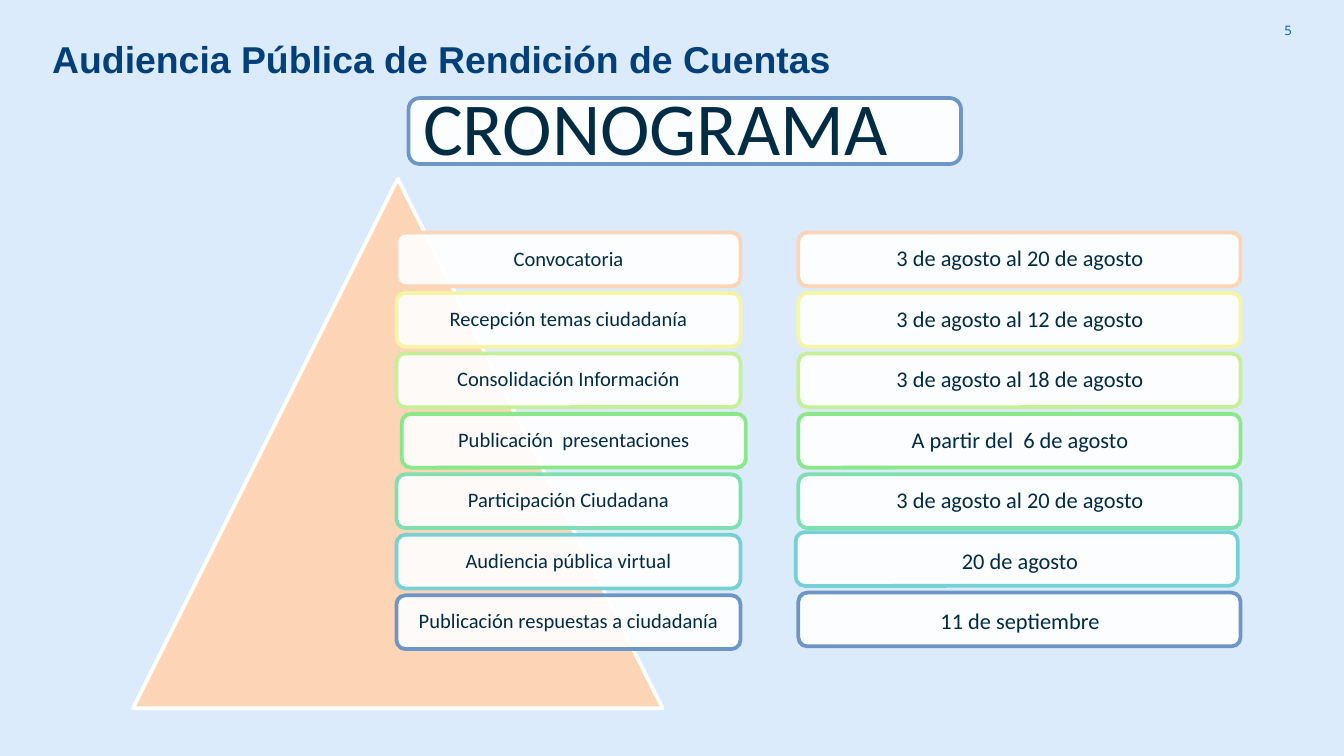
from dataclasses import dataclass

from lxml import etree
from pptx import Presentation
from pptx.dml.color import RGBColor
from pptx.enum.shapes import MSO_SHAPE
from pptx.enum.text import MSO_ANCHOR, PP_ALIGN
from pptx.oxml.ns import qn
from pptx.util import Inches, Pt

ROUNDED = MSO_SHAPE.ROUNDED_RECTANGLE
TRIANGLE = MSO_SHAPE.ISOSCELES_TRIANGLE
TOP, MIDDLE = MSO_ANCHOR.TOP, MSO_ANCHOR.MIDDLE
LEFT, CENTER, RIGHT = PP_ALIGN.LEFT, PP_ALIGN.CENTER, PP_ALIGN.RIGHT


@dataclass(frozen=True)
class Theme:
    background: str = "DCEBFB"
    white: str = "FFFFFF"
    ink: str = "022B44"
    title: str = "033F78"
    number: str = "0054BC"
    peach: str = "FBD5B5"
    blue: str = "6D96C7"
    rows: tuple = ("FBD5B5", "F6F4A5", "C5F097", "8AE88A", "7FDFB0", "75D1D4", "6D96C7")
    body_font: str = "Calibri"
    title_font: str = "Arial"
    number_font: str = "Open Sans"
    banner_size: int = 40
    title_size: int = 20
    date_size: int = 12
    stage_size: int = 11
    number_size: int = 7
    line_width: int = 2
    card_opacity: int = 90


THEME = Theme()

# Stage, left edge of its card, dates, left edge and upward shift of their card
SCHEDULE = [
    ("Convocatoria", 2.95, "3 de agosto al 20 de agosto", 5.94, 0),
    ("Recepción temas ciudadanía", 2.95, "3 de agosto al 12 de agosto", 5.94, 0),
    ("Consolidación Información", 2.95, "3 de agosto al 18 de agosto", 5.94, 0),
    ("Publicación  presentaciones", 2.99, "A partir del  6 de agosto", 5.94, 0),
    ("Participación Ciudadana", 2.95, "3 de agosto al 20 de agosto", 5.94, 0),
    ("Audiencia pública virtual", 2.95, "20 de agosto", 5.92, 0.02),
    ("Publicación respuestas a ciudadanía", 2.95, "11 de septiembre", 5.94, 0.02),
]
ROW_TOP, ROW_PITCH, ROW_HEIGHT = 1.73, 0.45, 0.4
STAGE_WIDTH, DATE_WIDTH = 2.56, 3.29
INSET = 0.02
LABEL_HEIGHT = ROW_HEIGHT - 2 * INSET
DATE_LABEL_LEFT, DATE_LABEL_WIDTH = 5.97, 3.24


def rgb(color):
    return RGBColor.from_string(color)


def add_label(s, box, text, size, color=THEME.ink, font=THEME.body_font, bold=False,
              align=CENTER, anchor=MIDDLE, margin=0.05, side_margin=None, spacing=0.9):
    """Text box with one paragraph; side_margin defaults to margin."""
    tf = s.shapes.add_textbox(*map(Inches, box)).text_frame
    tf.word_wrap = True
    tf.vertical_anchor = anchor
    tf.margin_top = tf.margin_bottom = Inches(margin)
    tf.margin_left = tf.margin_right = Inches(margin if side_margin is None else side_margin)
    p = tf.paragraphs[0]
    p.text = text
    p.alignment = align
    p.line_spacing = spacing
    p.font.size = Pt(size)
    p.font.name = font
    p.font.bold = bold
    p.font.color.rgb = rgb(color)


def add_outlined(s, kind, box, fill, line):
    sp = s.shapes.add_shape(kind, *map(Inches, box))
    sp.shadow.inherit = False
    sp.fill.solid()
    sp.fill.fore_color.rgb = rgb(fill)
    sp.line.color.rgb = rgb(line)
    sp.line.width = Pt(THEME.line_width)
    return sp


def add_card(s, box, line):
    """Rounded, slightly transparent white card."""
    sp = add_outlined(s, ROUNDED, box, THEME.white, line)
    color = sp.fill._xPr.find(qn("a:solidFill"))[0]
    etree.SubElement(color, qn("a:alpha"), val=str(THEME.card_opacity * 1000))


def add_schedule(s):
    for i, (stage, stage_left, dates, dates_left, lift) in enumerate(SCHEDULE):
        top = ROW_TOP + i * ROW_PITCH
        label_top = top + INSET
        add_card(s, (stage_left, top, STAGE_WIDTH, ROW_HEIGHT), THEME.rows[i])
        add_label(s, (stage_left + INSET, label_top, STAGE_WIDTH - 2 * INSET, LABEL_HEIGHT),
                  stage, THEME.stage_size)
        add_card(s, (dates_left, top - lift, DATE_WIDTH, ROW_HEIGHT), THEME.rows[i])
        add_label(s, (DATE_LABEL_LEFT, label_top, DATE_LABEL_WIDTH, LABEL_HEIGHT),
                  dates, THEME.date_size, margin=0.07)


def main():
    prs = Presentation()
    prs.slide_width = Inches(10)
    prs.slide_height = prs.slide_width * 9 // 16
    s = prs.slides.add_slide(prs.slide_layouts[6])
    s.background.fill.solid()
    s.background.fill.fore_color.rgb = rgb(THEME.background)

    add_label(s, (9.11, 0.01, 0.6, 0.43), "5", THEME.number_size, color=THEME.number,
              font=THEME.number_font, align=RIGHT, margin=0.1, spacing=1.0)
    add_label(s, (0.29, 0.22, 7.3, 0.77), "Audiencia Pública de Rendición de Cuentas",
              THEME.title_size, color=THEME.title, font=THEME.title_font, bold=True,
              align=LEFT, anchor=TOP, side_margin=0.1, spacing=1.0)
    add_card(s, (3.04, 0.73, 4.11, 0.49), THEME.blue)
    add_label(s, (2.85, 0.76, 4.05, 0.44), "CRONOGRAMA", THEME.banner_size, margin=0.07)
    add_outlined(s, TRIANGLE, (0.99, 1.33, 3.94, 3.94), THEME.peach, THEME.white)
    add_schedule(s)
    prs.save("out.pptx")


if __name__ == "__main__":
    main()
